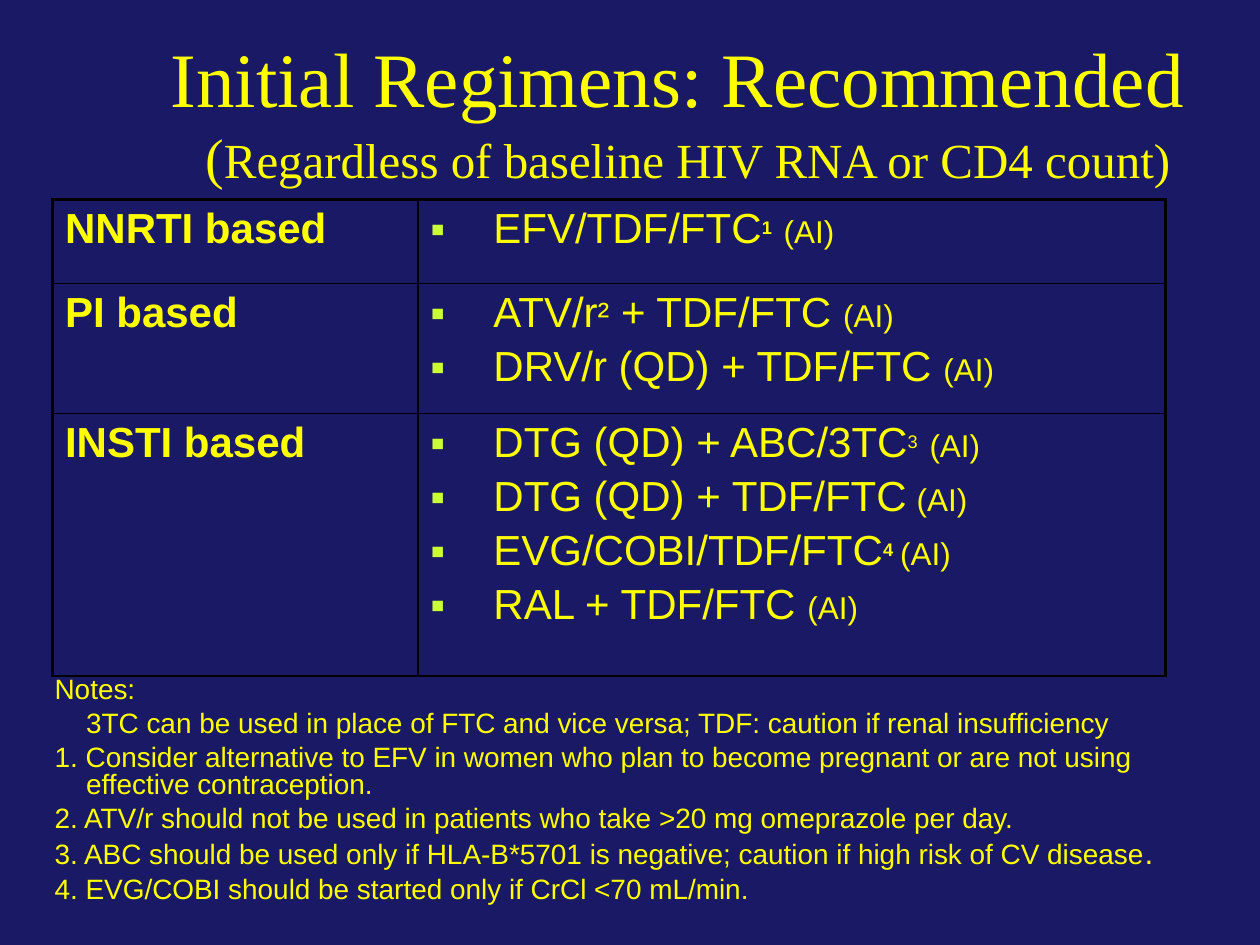
import dataclasses

import lxml.etree
import pptx
import pptx.dml.color
import pptx.enum.text
import pptx.oxml.ns
import pptx.util


@dataclasses.dataclass(frozen=True)
class Theme:
    background: str = "191966"
    text: str = "FFFF00"
    bullet: str = "CCFF33"
    border: str = "000000"
    heading_font: str = "Times New Roman"
    body_font: str = "Arial"
    title: int = 44
    bracket: int = 32
    subtitle: int = 28
    regimen: int = 24
    square: int = 20
    rating: int = 18
    note: int = 16
    gap: int = 4
    outer_line: float = 2.25
    inner_line: float = 1


theme = Theme()
rgb = pptx.dml.color.RGBColor.from_string
qn = pptx.oxml.ns.qn


def add_run(paragraph, text, size, font=theme.body_font, bold=False, raised=False):
    run = paragraph.add_run()
    run.text = text
    run.font.size = pptx.util.Pt(size)
    run.font.name = font
    run.font.bold = bold
    run.font.color.rgb = rgb(theme.text)
    if raised:
        run.font._element.set("baseline", "30000")


def add_property(parent, tag, **attributes):
    """Append a DrawingML element and return it."""
    return lxml.etree.SubElement(parent, qn(tag), attributes)


presentation = pptx.Presentation()
presentation.slide_width = pptx.util.Inches(10)
presentation.slide_height = pptx.util.Inches(7.5)
unit = presentation.slide_width / 120  # square grid: 120 columns, 90 rows

slide = presentation.slides.add_slide(presentation.slide_layouts[1])
slide.background.fill.solid()
slide.background.fill.fore_color.rgb = rgb(theme.background)

title = slide.shapes.title
notes = slide.placeholders[1]
places = [
    (title, (8, 3, 115, 15), pptx.enum.text.MSO_ANCHOR.MIDDLE),
    (notes, (4, 64, 115, 23), pptx.enum.text.MSO_ANCHOR.TOP),
]
for shape, place, anchor in places:
    shape.left, shape.top, shape.width, shape.height = (round(n * unit) for n in place)
    shape.text_frame.word_wrap = True
    shape.text_frame.auto_size = pptx.enum.text.MSO_AUTO_SIZE.NONE
    shape.text_frame.vertical_anchor = anchor

# Title
paragraph = title.text_frame.paragraphs[0]
paragraph.alignment = pptx.enum.text.PP_ALIGN.CENTER
add_run(paragraph, "Initial Regimens: Recommended ", theme.title, theme.heading_font)
paragraph.add_line_break()
add_run(paragraph, "(", theme.bracket, theme.heading_font)
add_run(paragraph, "Regardless of baseline HIV RNA or CD4 count)", theme.subtitle,
        theme.heading_font)

# Regimen table: each regimen is a list of (text, size, extra format)
large, medium, small = theme.regimen, theme.square, theme.rating
rating = ("(AI)", small, {})
space = (" ", large, {})
raised = {"raised": True}
raised_bold = {"raised": True, "bold": True}
groups = [
    ("NNRTI based", [
        [("EFV/TDF/FTC", large, {}), ("1", small, raised_bold), space, rating],
    ]),
    ("PI based", [
        [("ATV/r", large, {}), ("²", medium, {}), (" + TDF/FTC ", large, {}), rating],
        [("DRV/r (QD) + TDF/FTC ", large, {}), rating],
    ]),
    ("INSTI based", [
        [("DTG (QD) + ABC/3TC", large, {}), ("3", small, raised), space, rating],
        [("DTG (QD) + TDF/FTC", large, {}), (" ", medium, {}), rating],
        [("EVG/COBI/TDF/FTC", large, {}), ("4", small, raised_bold),
         (" ", large, raised_bold), rating],
        [("RAL + TDF/FTC ", large, {}), rating],
    ]),
]
column_widths = [34.8, 71.2]
row_heights = [8, 12.4, 25]
frame = slide.shapes.add_table(
    len(row_heights), len(column_widths), round(5 * unit), round(19 * unit),
    round(sum(column_widths) * unit), round(sum(row_heights) * unit))
table = frame.table
table.first_row = False
table.horz_banding = False
for column, width in zip(table.columns, column_widths):
    column.width = round(width * unit)
for row, height in zip(table.rows, row_heights):
    row.height = round(height * unit)

for row_index, (group, regimens) in enumerate(groups):
    group_cell, regimen_cell = table.rows[row_index].cells
    paragraph = group_cell.text_frame.paragraphs[0]
    paragraph.space_before = pptx.util.Pt(theme.gap)
    add_run(paragraph, group, theme.regimen, bold=True)

    for index, regimen in enumerate(regimens):
        text_frame = regimen_cell.text_frame
        paragraph = text_frame.add_paragraph() if index else text_frame.paragraphs[0]
        paragraph.space_before = pptx.util.Pt(theme.gap)
        properties = paragraph._p.get_or_add_pPr()
        properties.set("marL", str(round(6 * unit)))
        properties.set("indent", str(round(-6 * unit)))
        color = add_property(properties, "a:buClr")
        add_property(color, "a:srgbClr", val=theme.bullet)
        add_property(properties, "a:buFont", typeface=theme.body_font)
        add_property(properties, "a:buChar", char="▪")
        for text, size, extra in regimen:
            add_run(paragraph, text, size, **extra)

    for cell in (group_cell, regimen_cell):
        outer_sides = {
            "a:lnL": cell is group_cell,
            "a:lnR": cell is regimen_cell,
            "a:lnT": row_index == 0,
            "a:lnB": False,
        }
        for side, is_outer in outer_sides.items():
            width = theme.outer_line if is_outer else theme.inner_line
            line = add_property(cell._tc.get_or_add_tcPr(), side,
                                w=str(pptx.util.Pt(width)))
            fill = add_property(line, "a:solidFill")
            add_property(fill, "a:srgbClr", val=theme.border)
        cell.fill.background()

# Notes: text, left margin and first-line indent in grid columns
note_lines = [
    ("Notes:", 3, -3),
    ("3TC can be used in place of FTC and vice versa; TDF: caution if renal insufficiency",
     3, 0),
    ("1. Consider alternative to EFV in women who plan to become pregnant or are not using "
     "effective contraception.", 3, -3),
    ("2. ATV/r should not be used in patients who take >20 mg omeprazole per day.", 0, 0),
    ("3. ABC should be used only if HLA-B*5701 is negative; caution if high risk of CV "
     "disease", 0, 0),
    ("4. EVG/COBI should be started only if CrCl <70 mL/min.", 0, 0),
]
for index, (text, margin, indent) in enumerate(note_lines):
    text_frame = notes.text_frame
    paragraph = text_frame.add_paragraph() if index else text_frame.paragraphs[0]
    paragraph.line_spacing = 0.8
    paragraph.space_before = pptx.util.Pt(theme.gap)
    properties = paragraph._p.get_or_add_pPr()
    properties.set("marL", str(round(margin * unit)))
    properties.set("indent", str(round(indent * unit)))
    add_property(properties, "a:buNone")
    add_run(paragraph, text, theme.note)
    if text.startswith("3. "):
        add_run(paragraph, ".", theme.rating)

presentation.save("out.pptx")
